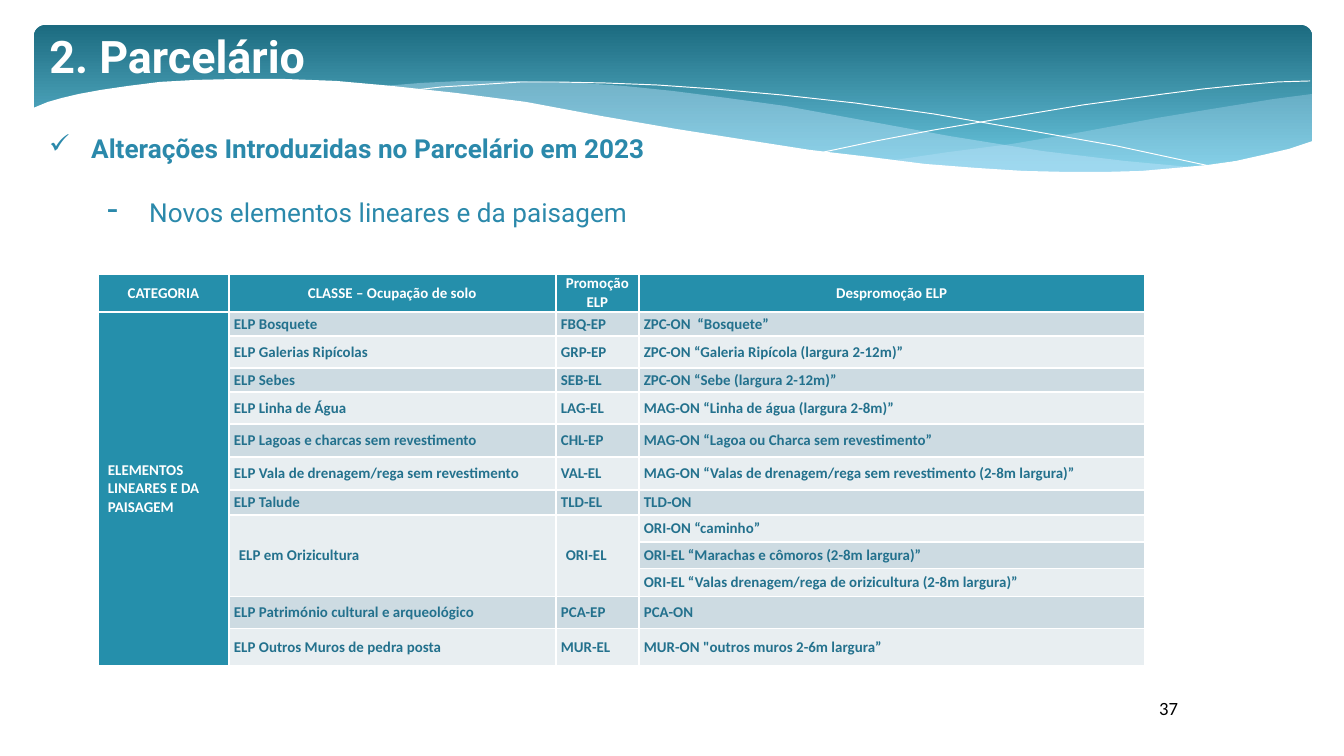
from lxml import etree
from pptx import Presentation
from pptx import util as u
from pptx.dml.color import RGBColor
from pptx.enum import shapes, text
from pptx.oxml.ns import qn

SCALE = 914400 / 134.4
TEAL, CELL_TEAL, CELL_TEXT = "2B89AB", "258FAB", "23718D"
BANDS = ("E8EEF1", "CDDBE2")


def px(length):
    return u.Emu(round(length * SCALE))


def style_run(run, size, font, color, bold=False):
    run.font.size = u.Pt(size)
    run.font.name = font
    run.font.bold = bold
    run.font.color.rgb = RGBColor.from_string(color)


presentation = Presentation()
presentation.slide_width, presentation.slide_height = px(1344), px(756)
slide = presentation.slides.add_slide(presentation.slide_layouts[5])

# Banner
banner = slide.shapes.add_shape(
    shapes.MSO_SHAPE.ROUNDED_RECTANGLE, px(34), px(25), px(1278), px(158))
banner.adjustments[0] = 0.07
banner.shadow.inherit = False
banner.line.fill.background()
banner.fill.gradient()
banner.fill.gradient_angle = 270
for stop, position, color in zip(banner.fill.gradient_stops, (0, 0.9), ("1C6B80", "6AC6DF")):
    stop.position = position
    stop.color.rgb = RGBColor.from_string(color)

right_wave = [
    (1312, 94), (1274, 99), (1218, 108), (1157, 118), (1082, 132), (1012, 144),
    (949, 152), (888, 161), (929, 165), (984, 169), (1034, 172), (1079, 173),
    (1122, 173), (1172, 171), (1216, 164), (1257, 157), (1294, 148), (1312, 142)]
middle_wave = [
    (1200, 168), (1125, 161), (1042, 151), (949, 136), (845, 117), (785, 106),
    (727, 98), (673, 91), (624, 86), (564, 82), (511, 81), (462, 81), (421, 83),
    (384, 86), (434, 91), (487, 98), (543, 106), (603, 117), (660, 128),
    (712, 136), (785, 148), (852, 157), (914, 164), (970, 169), (1023, 172),
    (1070, 174), (1113, 174), (1152, 172)]
falling_line = [
    (415, 90), (441, 87), (474, 85), (520, 82), (559, 82), (605, 83), (657, 85),
    (715, 89), (782, 95), (855, 103), (934, 114), (1021, 129), (1117, 146), (1219, 168)]
rising_line = [
    (824, 152), (876, 141), (934, 130), (1005, 118), (1083, 105), (1164, 94),
    (1203, 89), (1242, 85), (1278, 82), (1310, 81)]
white_wave = [
    (1313, 141), (1289, 149), (1263, 155), (1236, 161), (1208, 165), (1176, 168),
    (1142, 171), (1106, 172), (1066, 172), (1023, 171), (976, 168), (925, 164),
    (870, 157), (810, 150), (746, 140), (676, 129), (601, 116), (526, 102),
    (456, 93), (392, 86), (336, 81), (284, 79), (238, 79), (196, 80), (160, 82),
    (128, 86), (101, 90), (79, 94), (62, 98), (48, 102), (31, 109), (31, 226), (1313, 226)]

# Points, fill colour (None for a line), opacity in percent
for points, color, opacity in [
        (right_wave, "C6E7FC", 29), (middle_wave, "C6E7FC", 40),
        (falling_line, None, 100), (rising_line, None, 100), (white_wave, "FFFFFF", 100)]:
    builder = slide.shapes.build_freeform(*points[0], scale=SCALE)
    builder.add_line_segments(points[1:], close=color is not None)
    wave = builder.convert_to_shape()
    wave.shadow.inherit = False
    if color is None:
        wave.fill.background()
        wave.line.color.rgb = RGBColor.from_string("FFFFFF")
        wave.line.width = u.Pt(0.5)
        continue
    wave.line.fill.background()
    wave.fill.solid()
    wave.fill.fore_color.rgb = RGBColor.from_string(color)
    if opacity < 100:
        fill_color = wave.fill._xPr.find(qn("a:solidFill"))[0]
        etree.SubElement(fill_color, qn("a:alpha"), val=str(opacity * 1000))

# Title, brought in front of the banner
title = slide.shapes.title
slide.shapes._spTree.append(title._element)
title.left, title.top, title.width, title.height = px(36), px(22), px(403), px(67)
title.text_frame.auto_size = text.MSO_AUTO_SIZE.NONE
title.text_frame.vertical_anchor = text.MSO_ANCHOR.TOP
paragraph = title.text_frame.paragraphs[0]
paragraph.alignment = text.PP_ALIGN.LEFT
run = paragraph.add_run()
run.text = "2. Parcelário"
style_run(run, 24, "Roboto", "FFFFFF", True)

# Bulleted headings
for left, top, width, bullet, bullet_size, bold, words in [
        (36, 126, 831, "✓", 100, True, "Alterações Introduzidas no Parcelário em 2023"),
        (94, 190, 1044, "-", 125, False, "Novos elementos lineares e da paisagem")]:
    heading = slide.shapes.add_textbox(px(left), px(top), px(width), px(46))
    heading.text_frame.word_wrap = True
    paragraph = heading.text_frame.paragraphs[0]
    properties = paragraph._p.get_or_add_pPr()
    properties.set("marL", str(px(42)))
    properties.set("indent", str(-px(42)))
    bullet_color = etree.SubElement(properties, qn("a:buClr"))
    etree.SubElement(bullet_color, qn("a:srgbClr"), val=TEAL)
    etree.SubElement(properties, qn("a:buSzPct"), val=str(bullet_size * 1000))
    etree.SubElement(properties, qn("a:buChar"), char=bullet)
    run = paragraph.add_run()
    run.text = words
    style_run(run, 14, "Roboto", TEAL, bold)

# Table
rows = [
    ("CATEGORIA", "CLASSE – Ocupação de solo", "Promoção ELP", "Despromoção ELP"),
    ("ELEMENTOS LINEARES E DA PAISAGEM", "ELP Bosquete", "FBQ-EP", "ZPC-ON  “Bosquete”"),
    ("", "ELP Galerias Ripícolas", "GRP-EP", "ZPC-ON “Galeria Ripícola (largura 2-12m)”"),
    ("", "ELP Sebes", "SEB-EL", "ZPC-ON “Sebe (largura 2-12m)”"),
    ("", "ELP Linha de Água", "LAG-EL", "MAG-ON “Linha de água (largura 2-8m)”"),
    ("", "ELP Lagoas e charcas sem revestimento", "CHL-EP",
     "MAG-ON “Lagoa ou Charca sem revestimento”"),
    ("", "ELP Vala de drenagem/rega sem revestimento", "VAL-EL",
     "MAG-ON “Valas de drenagem/rega sem revestimento (2-8m largura)”"),
    ("", "ELP Talude", "TLD-EL", "TLD-ON"),
    ("", "ELP em Orizicultura", "ORI-EL", "ORI-ON “caminho”"),
    ("", "", "", "ORI-EL “Marachas e cômoros (2-8m largura)”"),
    ("", "", "", "ORI-EL “Valas drenagem/rega de orizicultura (2-8m largura)”"),
    ("", "ELP Património cultural e arqueológico", "PCA-EP", "PCA-ON"),
    ("", "ELP Outros Muros de pedra posta", "MUR-EL", "MUR-ON \"outros muros 2-6m largura”"),
]
row_heights = [38, 24, 32, 24, 32, 33, 33, 25, 27, 27, 28, 32, 37]
column_widths = [131, 327, 83, 506]
table = slide.shapes.add_table(
    len(rows), 4, px(98), px(274), px(sum(column_widths)), px(sum(row_heights))).table
table.horz_banding = False
for column, width in zip(table.columns, column_widths):
    column.width = px(width)
for row, height in zip(table.rows, row_heights):
    row.height = px(height)
for first_row, last_row, column in [(1, 12, 0), (8, 10, 1), (8, 10, 2)]:
    table.cell(first_row, column).merge(table.cell(last_row, column))

for row_index, row in enumerate(rows):
    for column_index, words in enumerate(row):
        cell = table.cell(row_index, column_index)
        dark = row_index == 0 or column_index == 0
        wide_margin = cell.is_merge_origin
        cell.margin_left = cell.margin_right = px(10 if wide_margin else 5)
        cell.margin_top = cell.margin_bottom = px(5 if wide_margin else 0)
        cell.vertical_anchor = text.MSO_ANCHOR.MIDDLE
        cell.fill.solid()
        cell.fill.fore_color.rgb = RGBColor.from_string(
            CELL_TEAL if dark else BANDS[row_index % 2])
        paragraph = cell.text_frame.paragraphs[0]
        paragraph.alignment = text.PP_ALIGN.CENTER if row_index == 0 else text.PP_ALIGN.LEFT
        if words:
            run = paragraph.add_run()
            run.text = words
            style_run(run, 8, "Calibri", "FFFFFF" if dark else CELL_TEXT, True)

# Page number
page_number = slide.shapes.add_textbox(px(1146), px(688), px(171), px(40))
page_number.text_frame.word_wrap = True
page_number.text_frame.vertical_anchor = text.MSO_ANCHOR.MIDDLE
run = page_number.text_frame.paragraphs[0].add_run()
run.text = "37"
style_run(run, 10, "Calibri", "000000")

presentation.save("out.pptx")
